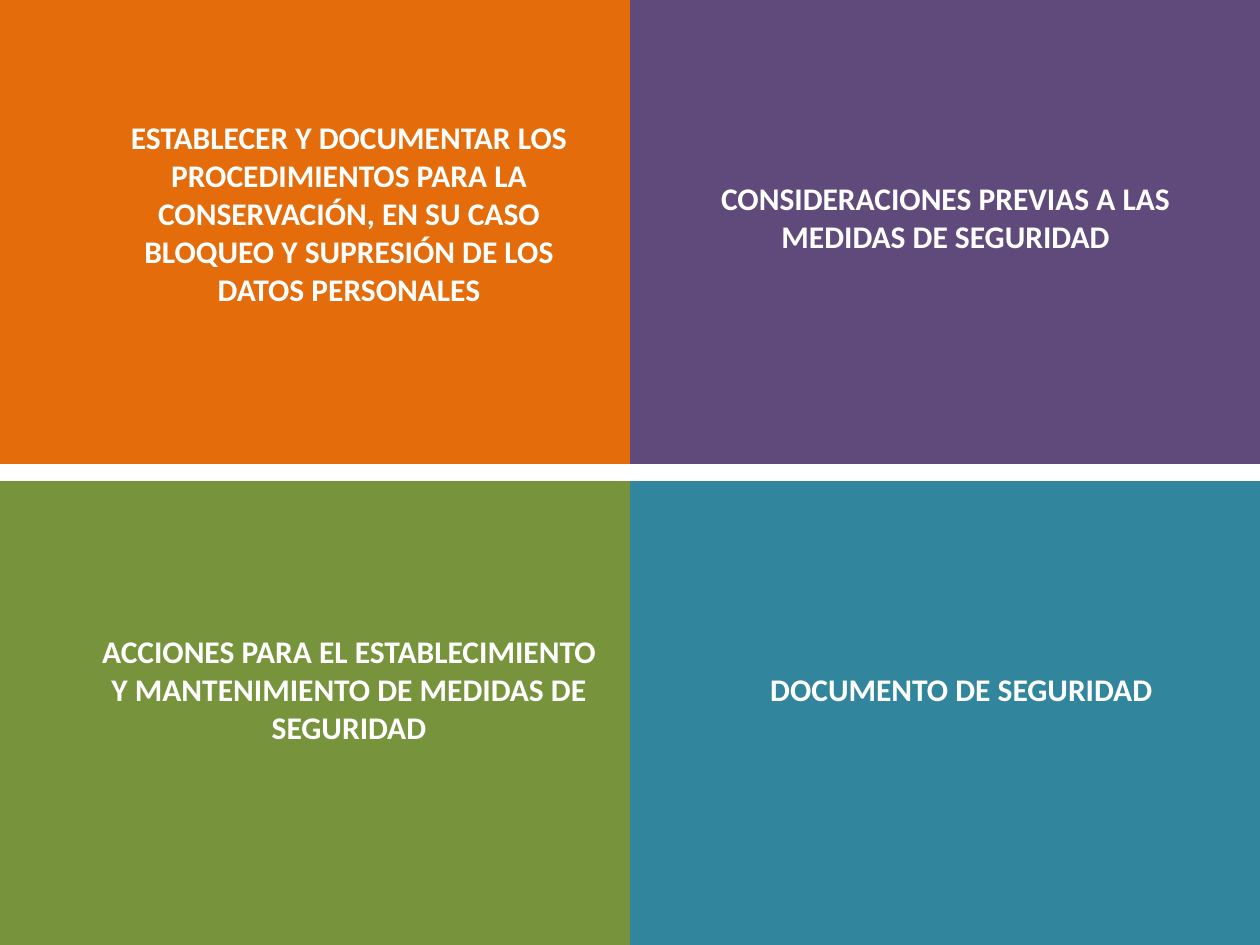
"""Build a slide of four coloured quadrants, each with a centred heading."""
from pptx import Presentation, util as u
from pptx.dml.color import RGBColor
from pptx.enum import shapes, text
from pptx.oxml.ns import qn


def tint(code):
    return RGBColor.from_string(code)


deck = Presentation()
deck.slide_width, deck.slide_height = u.Inches(10), u.Inches(7.5)
slide = deck.slides.add_slide(deck.slide_layouts[6])
col, row = deck.slide_width // 2, deck.slide_height // 2
white = tint("FFFFFF")
style = {"name": "Calibri", "size": u.Pt(18), "bold": True}
frame = {"word_wrap": True, "auto_size": text.MSO_AUTO_SIZE.SHAPE_TO_FIT_TEXT}

cells = [
    (1, 0, "604A7B", (5.58, 1.37, 3.85, 0.71),
     "CONSIDERACIONES PREVIAS A LAS MEDIDAS DE SEGURIDAD"),
    (1, 1, "31859C", (5.26, 5.27, 4.74, 0.4),
     "DOCUMENTO DE SEGURIDAD"),
    (0, 1, "77933C", (0.7, 4.97, 4.14, 1.01),
     "ACCIONES PARA EL ESTABLECIMIENTO Y MANTENIMIENTO DE MEDIDAS DE SEGURIDAD"),
    (0, 0, "E46C0A", (0.7, 0.89, 4.14, 1.62),
     "ESTABLECER Y DOCUMENTAR LOS PROCEDIMIENTOS PARA LA CONSERVACIÓN, "
     "EN SU CASO BLOQUEO Y SUPRESIÓN DE LOS DATOS PERSONALES"),
]

for x, y, hue, area, words in cells:
    tile = slide.shapes.add_shape(
        shapes.MSO_SHAPE.RECTANGLE, x * col, y * row, col, row)
    tile.shadow.inherit = False
    tile.fill.solid()
    tile.fill.fore_color.rgb = tint(hue)
    tile.line.fill.background()

for x, y, hue, area, words in cells:
    box = slide.shapes.add_textbox(*map(u.Inches, area)).text_frame
    for key, value in frame.items():
        setattr(box, key, value)
    para = box.paragraphs[0]
    para.alignment = text.PP_ALIGN.CENTER
    run = para.add_run()
    run.text = words
    for key, value in style.items():
        setattr(run.font, key, value)
    run.font.color.rgb = white

rule = slide.shapes.add_connector(
    shapes.MSO_CONNECTOR.STRAIGHT, 0, row, 2 * col, row)
rule.line.color.rgb = white
rule.line.width = u.Pt(10)
props = rule.element.spPr
props.append(props.makeelement(qn("a:effectLst"), {}))

deck.save("out.pptx")
